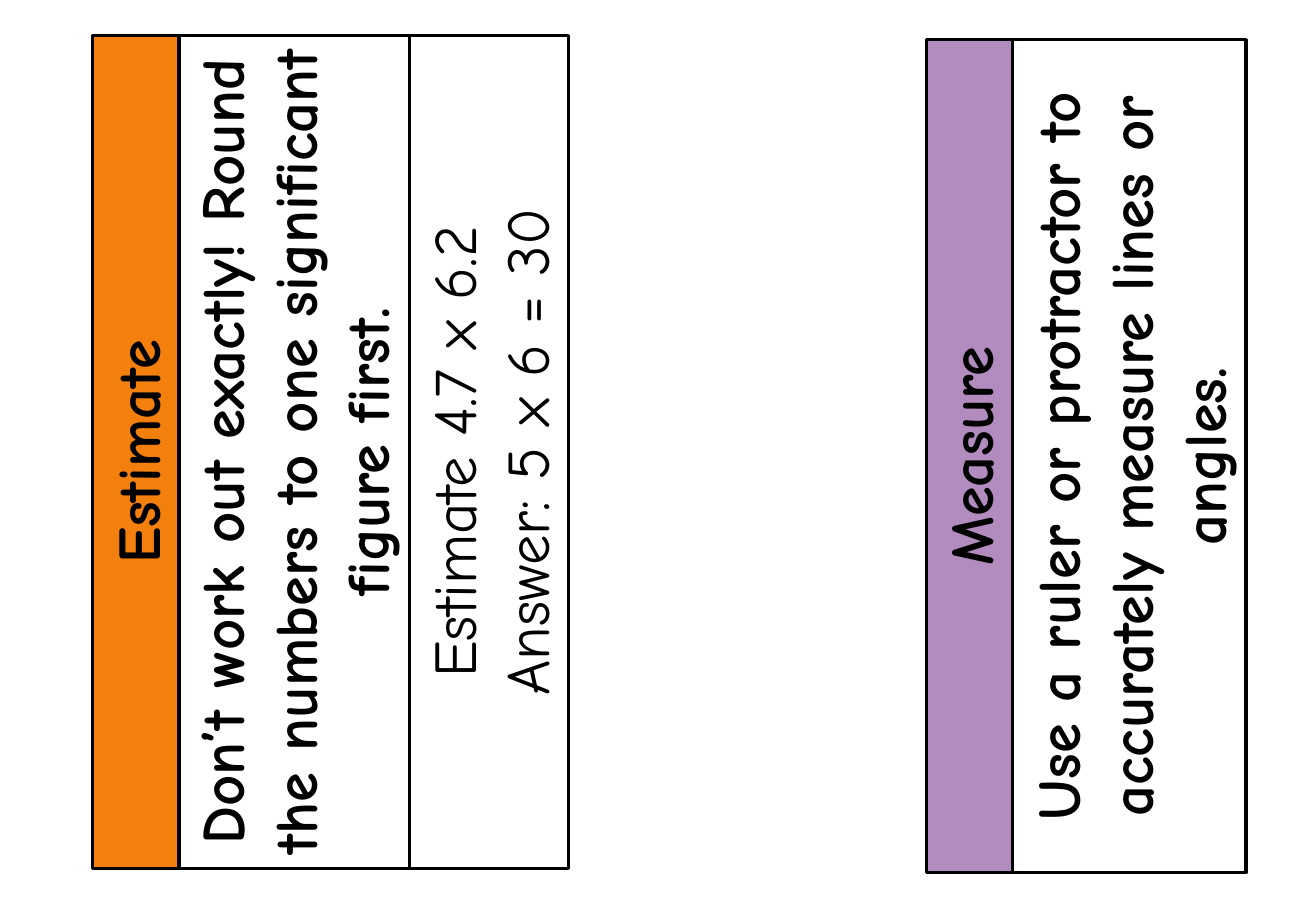
from pptx import Presentation, util as u
from pptx.dml.color import RGBColor
from pptx.enum import shapes, text

STRIP_LENGTH = 17.42
HEADING_DEPTH = 1.8
RULE_DEPTH = 4.88
EXAMPLE_DEPTH = 3.33
FONT = {"name": "Comic Neue", "size": u.Pt(36)}


def colour(hex_code):
    """Return the colour for a hex string."""
    return RGBColor.from_string(hex_code)


def add_strip(slide, left, middle, depth, lines, fill="FFFFFF", bold=True):
    """Add a strip that reads upwards, with its left edge and vertical middle given in cm."""
    centre = left + depth / 2
    strip = slide.shapes.add_shape(
        shapes.MSO_SHAPE.RECTANGLE,
        u.Cm(centre - STRIP_LENGTH / 2), u.Cm(middle - depth / 2),
        u.Cm(STRIP_LENGTH), u.Cm(depth))
    strip.rotation = 270
    strip.shadow.inherit = False
    strip.fill.solid()
    strip.fill.fore_color.rgb = colour(fill)
    strip.line.color.rgb = colour("000000")
    strip.line.width = u.Pt(2)

    frame = strip.text_frame
    frame.word_wrap = True
    frame.auto_size = text.MSO_AUTO_SIZE.SHAPE_TO_FIT_TEXT
    frame.text = "\n".join(lines)
    for paragraph in frame.paragraphs:
        paragraph.alignment = text.PP_ALIGN.CENTER
        font = paragraph.runs[0].font
        for attribute, value in {**FONT, "bold": bold}.items():
            setattr(font, attribute, value)
        font.color.rgb = colour("000000")


def add_card(slide, left, middle, heading, fill, rule, example=(), overlap=0):
    """Add a command word card: heading, rule and optional worked example side by side."""
    rule_left = left + HEADING_DEPTH - overlap
    add_strip(slide, rule_left, middle, RULE_DEPTH, [rule])
    add_strip(slide, left, middle, HEADING_DEPTH, [heading], fill)
    if example:
        add_strip(slide, rule_left + RULE_DEPTH, middle, EXAMPLE_DEPTH, example, bold=False)


def main():
    """Build the slide with its two cards and save it."""
    deck = Presentation()
    deck.slide_width, deck.slide_height = u.Cm(27.51), u.Cm(19.05)
    slide = deck.slides.add_slide(deck.slide_layouts[6])
    add_card(slide, 1.94, 9.45, "Estimate", "F3800D",
             "Don’t work out exactly! Round the numbers to one significant figure first.",
             ["Estimate 4.7 x 6.2", "Answer: 5 x 6 = 30"], overlap=0.06)
    add_card(slide, 19.37, 9.54, "Measure", "B38CBF",
             "Use a ruler or protractor to accurately measure lines or angles.")
    deck.save("out.pptx")


if __name__ == "__main__":
    main()
